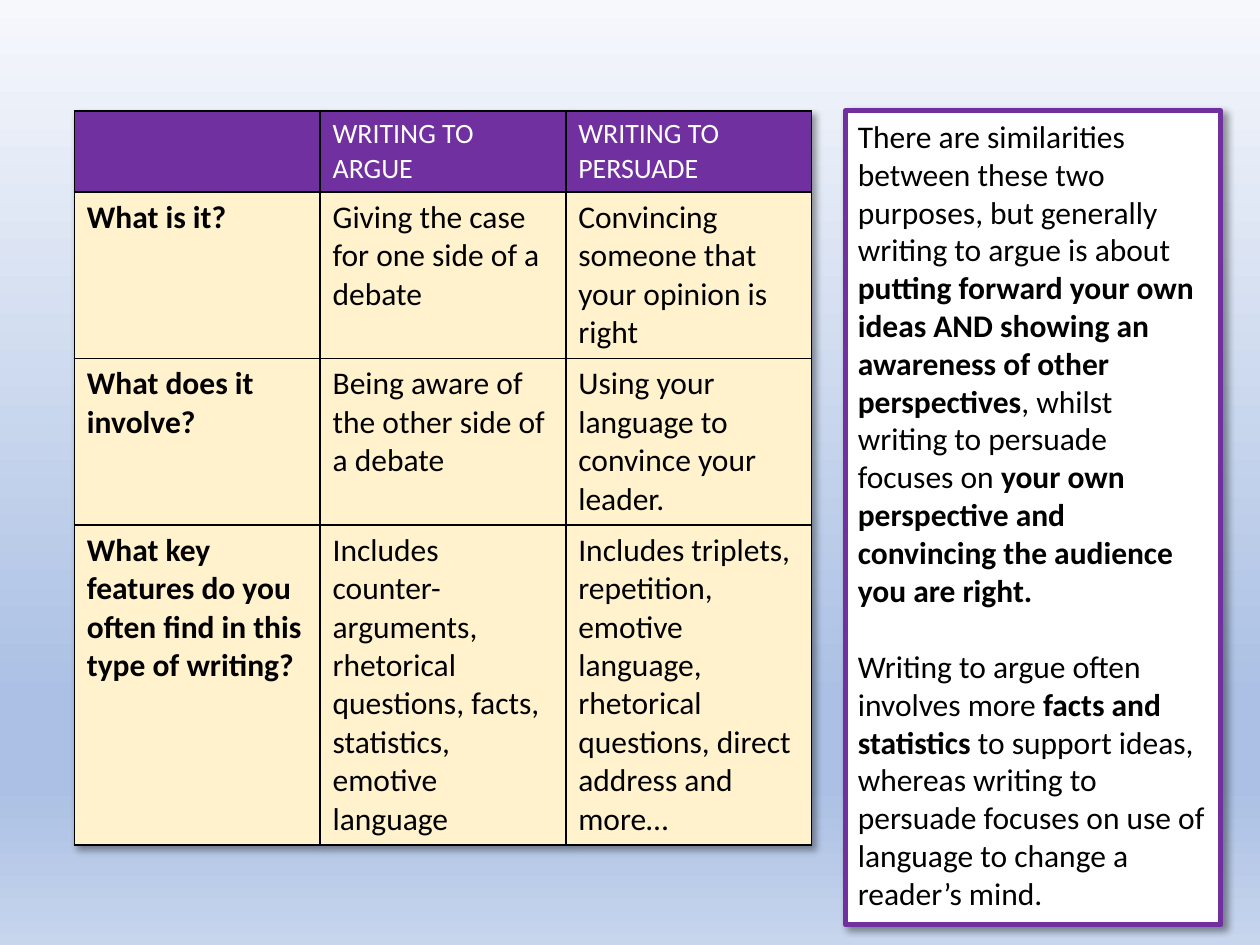
from lxml import etree
from pptx import Presentation
from pptx.dml.color import RGBColor
from pptx.enum.shapes import MSO_SHAPE
from pptx.enum.text import MSO_ANCHOR, MSO_AUTO_SIZE, PP_ALIGN
from pptx.oxml import parse_xml
from pptx.oxml.ns import qn
from pptx.util import Inches, Pt

RECTANGLE = MSO_SHAPE.RECTANGLE
TOP = MSO_ANCHOR.TOP
LEFT = PP_ALIGN.LEFT
FIT_SHAPE = MSO_AUTO_SIZE.SHAPE_TO_FIT_TEXT

PURPLE = RGBColor(0x70, 0x30, 0xA0)
CREAM = RGBColor(0xFF, 0xF2, 0xCC)
WHITE = RGBColor(0xFF, 0xFF, 0xFF)
BLACK = RGBColor(0, 0, 0)
FONT = "Calibri"
NAMESPACE = 'xmlns:a="http://schemas.openxmlformats.org/drawingml/2006/main"'

BACKGROUND_STOPS = [(0, "F6F8FC"), (74, "ABC0E4"), (83, "ABC0E4"), (100, "C7D5ED")]

COMPARISON = [
    ["", "WRITING TO ARGUE", "WRITING TO PERSUADE"],
    ["What is it?", "Giving the case for one side of a debate",
     "Convincing someone that your opinion is right"],
    ["What does it involve?", "Being aware of the other side of a debate",
     "Using your language to convince your leader."],
    ["What key features do you often find in this type of writing?",
     "Includes counter-arguments, rhetorical questions, facts, statistics, emotive language",
     "Includes triplets, repetition, emotive language, rhetorical questions, "
     "direct address and more…"],
]
COLUMN_WIDTH = 1.95
ROW_HEIGHTS = [0.64, 1.32, 1.32, 2.54]

EXPLANATION = [
    [("There are similarities between these two purposes, but generally "
      "writing to argue is about ", False),
     ("putting forward your own ideas AND showing an awareness of other perspectives", True),
     (", whilst writing to persuade focuses on ", False),
     ("your own perspective and convincing the audience you are right.", True)],
    [("Writing to argue often involves more ", False),
     ("facts and statistics", True),
     (" to support ideas, whereas writing to persuade focuses on use of language "
      "to change a reader’s mind.", False)],
]


def add_run(paragraph, text, size, color, bold):
    run = paragraph.add_run()
    run.text = text
    run.font.name = FONT
    run.font.size = Pt(size)
    run.font.bold = bold
    run.font.color.rgb = color


def shadow_effect():
    return parse_xml(
        f'<a:effectLst {NAMESPACE}><a:outerShdw blurRad="{Pt(4)}" dist="{Pt(3)}" '
        'dir="2700000" algn="tl" rotWithShape="0"><a:srgbClr val="000000">'
        '<a:alpha val="40000"/></a:srgbClr></a:outerShdw></a:effectLst>')


def set_background(slide):
    slide.background.fill.gradient()
    gradient = slide.element.find(".//" + qn("a:gradFill"))
    stops = gradient.find(qn("a:gsLst"))
    for stop in list(stops):
        stops.remove(stop)
    for position, color in BACKGROUND_STOPS:
        stop = etree.SubElement(stops, qn("a:gs"), pos=str(position * 1000))
        etree.SubElement(stop, qn("a:srgbClr"), val=color)
    gradient.find(qn("a:lin")).set("ang", "5400000")


def add_borders(cell):
    properties = cell._tc.get_or_add_tcPr()
    for index, side in enumerate(("lnL", "lnR", "lnT", "lnB")):
        properties.insert(index, parse_xml(
            f'<a:{side} {NAMESPACE} w="{Pt(1)}"><a:solidFill>'
            f'<a:srgbClr val="{BLACK}"/></a:solidFill></a:{side}>'))


def add_comparison(slide):
    rows, columns = len(COMPARISON), len(COMPARISON[0])
    table = slide.shapes.add_table(
        rows, columns, Inches(0.59), Inches(0.88),
        Inches(COLUMN_WIDTH * columns), Inches(sum(ROW_HEIGHTS))).table
    table._tbl.tblPr.insert(0, shadow_effect())
    for column in table.columns:
        column.width = Inches(COLUMN_WIDTH)
    for row_index, texts in enumerate(COMPARISON):
        table.rows[row_index].height = Inches(ROW_HEIGHTS[row_index])
        header = row_index == 0
        for column_index, text in enumerate(texts):
            cell = table.cell(row_index, column_index)
            cell.fill.solid()
            cell.fill.fore_color.rgb = PURPLE if header else CREAM
            add_borders(cell)
            if text:
                add_run(cell.text_frame.paragraphs[0], text, 16 if header else 18,
                        WHITE if header else BLACK, not header and column_index == 0)


def add_explanation(slide):
    shape = slide.shapes.add_shape(
        RECTANGLE, Inches(6.71), Inches(0.88), Inches(2.98), Inches(6.46))
    shape.fill.solid()
    shape.fill.fore_color.rgb = WHITE
    shape.line.color.rgb = PURPLE
    shape.line.width = Pt(3)
    shape._element.spPr.append(shadow_effect())
    frame = shape.text_frame
    frame.word_wrap = True
    frame.auto_size = FIT_SHAPE
    frame.vertical_anchor = TOP
    for index, runs in enumerate(EXPLANATION):
        paragraph = frame.add_paragraph() if index else frame.paragraphs[0]
        paragraph.alignment = LEFT
        paragraph.space_before = Pt(22 if index else 0)
        for text, bold in runs:
            add_run(paragraph, text, 18, BLACK, bold)


def main():
    presentation = Presentation()
    presentation.slide_width = Inches(10)
    presentation.slide_height = Inches(7.5)
    slide = presentation.slides.add_slide(presentation.slide_layouts[6])
    set_background(slide)
    add_comparison(slide)
    add_explanation(slide)
    presentation.save("out.pptx")


if __name__ == "__main__":
    main()
